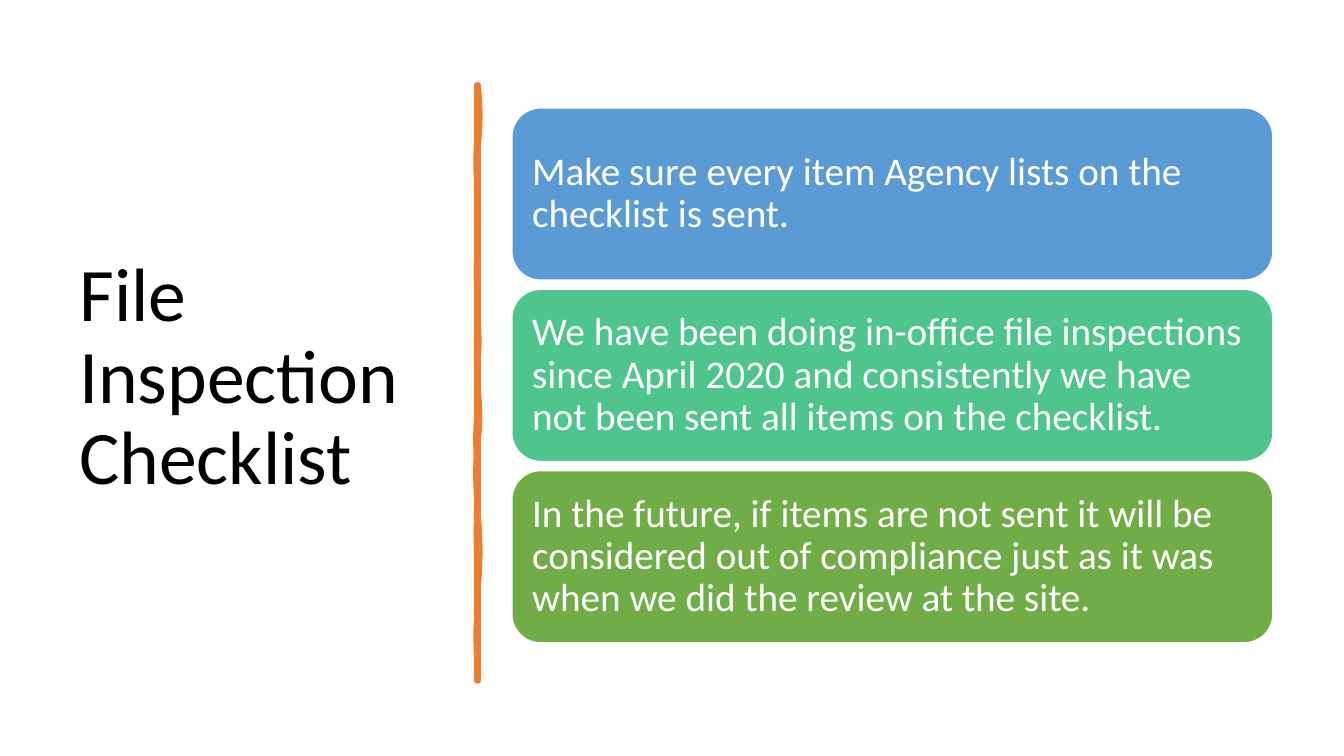
import pptx
import pptx.util
import pptx.dml.color
import pptx.enum.shapes
import pptx.enum.text
import lxml.etree

Cm, Pt = pptx.util.Cm, pptx.util.Pt
RGBColor = pptx.dml.color.RGBColor

BLACK = RGBColor(0x00, 0x00, 0x00)
WHITE = RGBColor(0xFF, 0xFF, 0xFF)
ORANGE = RGBColor(0xED, 0x7D, 0x31)
BLUE = RGBColor(0x5B, 0x9B, 0xD5)
TEAL = RGBColor(0x4D, 0xC5, 0x8D)
GREEN = RGBColor(0x70, 0xAD, 0x47)


def write(tf, text, size, color):
    tf.word_wrap = True
    tf.vertical_anchor = pptx.enum.text.MSO_ANCHOR.MIDDLE
    p = tf.paragraphs[0]
    p.alignment = pptx.enum.text.PP_ALIGN.LEFT
    p.line_spacing = 0.9
    r = p.add_run()
    r.text = text
    r.font.name = "Calibri"
    r.font.size = Pt(size)
    r.font.color.rgb = color


def wavy_edge(x, y, curves):
    """Points along an edge; each curve is (end y, first bulge, second bulge)."""
    points = []
    for end, bulge1, bulge2 in curves:
        for step in range(1, 9):
            t = step / 8
            bulge = 3 * t * (1 - t) * ((1 - t) * bulge1 + t * bulge2)
            points.append((Cm(x + BULGE * bulge), Cm(y + (end - y) * t)))
        y = end
    return points


prs = pptx.Presentation()
prs.slide_width, prs.slide_height = Cm(33.87), Cm(19.05)
s = prs.slides.add_slide(prs.slide_layouts[6])

# Title
sp = s.shapes.add_textbox(Cm(1.75), Cm(1.78), Cm(9.5), Cm(15.52))
write(sp.text_frame, "File Inspection Checklist", 54, BLACK)

# Hand-drawn divider: down the right edge, up the left edge
BULGE = 0.03
TOP, BOTTOM = 2.13, 17.17
LEFT, RIGHT = 12.01, 12.06
down = [(3.71, 2, 2), (5.74, -2, 1), (7.47, -1, 0), (9.04, -1, 2),
        (11.07, -2, 4), (12.95, -4, -3), (14.83, 2, 2), (BOTTOM, -2, 1)]
up = [(15.57, 1, -2), (14.15, 1, 1), (12.12, -1, 0), (10.54, 0, -2),
      (8.51, 1, -1), (6.35, 1, -1), (4.6, 1, 2), (TOP, -3, 4)]
builder = s.shapes.build_freeform(Cm(RIGHT), Cm(TOP))
builder.add_line_segments(wavy_edge(RIGHT, TOP, down))
builder.add_line_segments([(Cm(LEFT), Cm(BOTTOM))] + wavy_edge(LEFT, BOTTOM, up))
sp = builder.convert_to_shape()
sp.shadow.inherit = False
sp.fill.solid()
sp.fill.fore_color.rgb = ORANGE
sp.line.color.rgb = ORANGE
sp.line.width = Pt(3.25)
ln = sp.line._get_or_add_ln()
lxml.etree.SubElement(ln, pptx.oxml.ns.qn("a:round"))

# Cards
cards = [
    (BLUE, "Make sure every item Agency lists on the checklist is sent."),
    (TEAL, "We have been doing in-office file inspections since April 2020 "
           "and consistently we have not been sent all items on the checklist."),
    (GREEN, "In the future, if items are not sent it will be considered out of "
            "compliance just as it was when we did the review at the site."),
]
for i, (color, text) in enumerate(cards):
    sp = s.shapes.add_shape(pptx.enum.shapes.MSO_SHAPE.ROUNDED_RECTANGLE,
                            Cm(12.9), Cm(2.72 + 4.57 * i), Cm(19.18), Cm(4.34))
    sp.shadow.inherit = False
    sp.fill.solid()
    sp.fill.fore_color.rgb = color
    sp.line.color.rgb = WHITE
    sp.line.width = Pt(1)
    tf = sp.text_frame
    tf.margin_left = tf.margin_right = tf.margin_top = tf.margin_bottom = Cm(0.3)
    write(tf, text, 28, WHITE)

prs.save("out.pptx")
